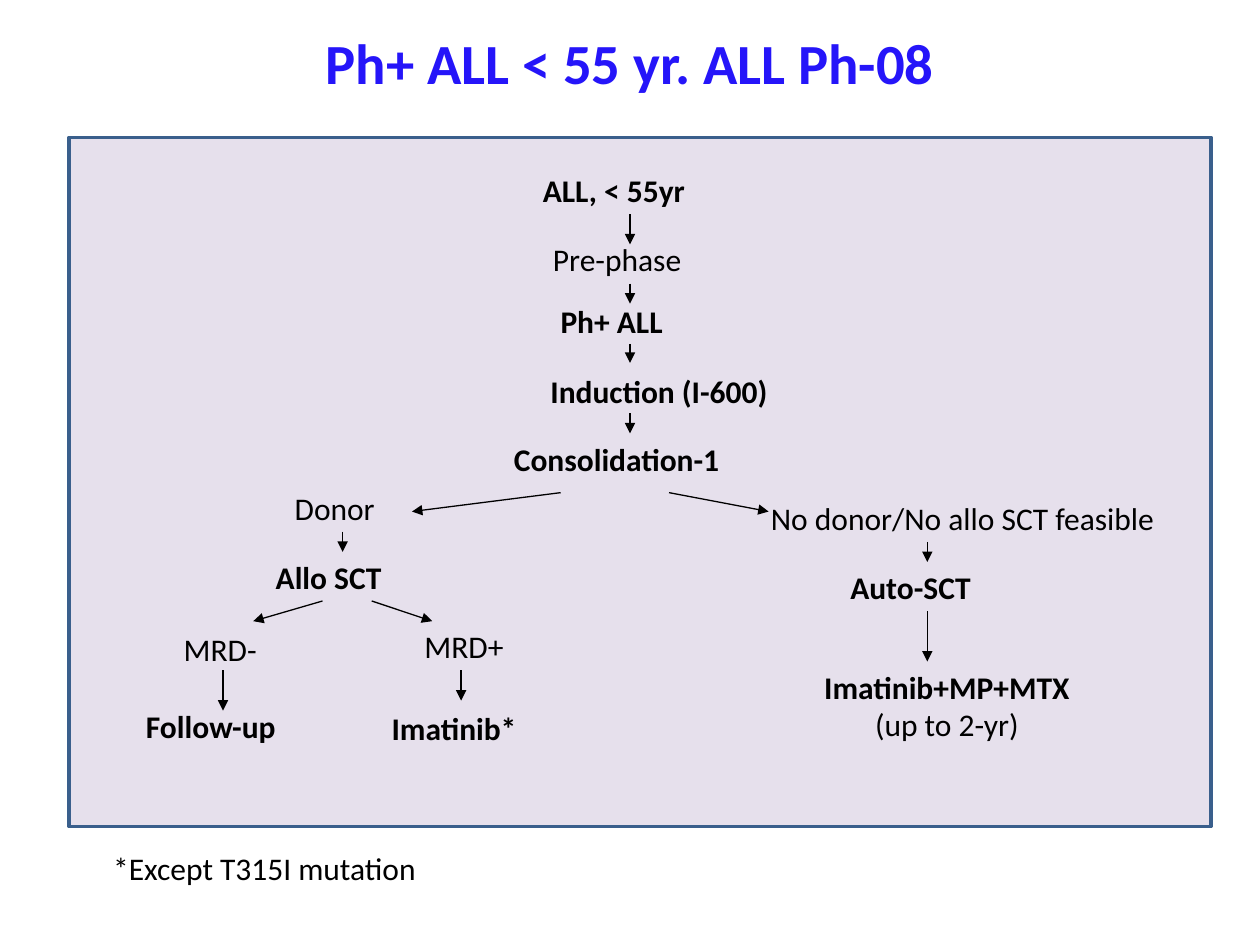
from pptx import Presentation, util as u
from pptx.dml.color import RGBColor
from pptx.enum import shapes, text
from pptx.oxml import parse_xml
from pptx.oxml.ns import nsdecls, qn
from lxml import etree

THEME = {
    "font": "Calibri", "title_size": 32.4, "body_size": 18,
    "title": "2515F9", "ink": "000000", "panel": "E6E0EC", "edge": "3A5F8C",
    "edge_width": 2, "arrow_width": 0.75,
}
TITLE = "Ph+ ALL < 55 yr. ALL Ph-08"
LINE_HEIGHT = 0.4
PANEL = (0.55, 1.09, 9.06, 5.47)

# Steps: left, top, width, lines as (wording, bold)
STEPS = [
    (4.21, 1.31, 1.56, [("ALL, < 55yr", True)]),
    (4.29, 1.86, 1.35, [("Pre-phase", False)]),
    (4.35, 2.35, 1.22, [("Ph+ ALL", True)]),
    (4.27, 2.90, 2.15, [("Induction (I-600)", True)]),
    (3.98, 3.44, 2.09, [("Consolidation-1", True)]),
    (2.24, 3.83, 0.88, [("Donor", False)]),
    (2.09, 4.38, 1.24, [("Allo SCT", True)]),
    (1.36, 4.95, 0.85, [("MRD-", False)]),
    (3.27, 4.93, 0.92, [("MRD+", False)]),
    (3.01, 5.58, 1.26, [("Imatinib*", True)]),
    (1.06, 5.56, 1.38, [("Follow-up", True)]),
    (6.02, 3.91, 3.61, [("No donor/No allo SCT feasible", False)]),
    (6.65, 4.46, 1.35, [("Auto-SCT", True)]),
    (6.34, 5.25, 2.35, [("Imatinib+MP+MTX", True), ("(up to 2-yr)", False)]),
    (0.80, 6.69, 2.80, [("*Except T315I mutation", False)]),
]

# Vertical arrows: x position, then (start, end) heights
DOWN_ARROWS = {
    5.00: [(1.70, 1.94), (2.25, 2.41), (2.73, 2.88), (3.28, 3.44)],
    2.72: [(4.22, 4.38)],
    1.77: [(5.32, 5.64)],
    3.66: [(5.32, 5.56)],
    7.36: [(4.30, 4.46), (4.85, 5.25)],
}
# Branches: start height, end height, (start x, end x) of each arm
BRANCHES = [
    (3.91, 4.06, [(4.45, 3.27), (5.31, 6.10)]),
    (4.77, 4.93, [(2.56, 2.01), (2.95, 3.43)]),
]


def color(name):
    return RGBColor.from_string(THEME[name])


def add_span(para, wording, size, ink, bold):
    span = para.add_run()
    span.text = wording
    span.font.name = THEME["font"]
    span.font.size = u.Pt(THEME[size])
    span.font.bold = bold
    span.font.color.rgb = color(ink)


def add_title(page):
    box = page.shapes.add_textbox(*map(u.Inches, (0.5, 0.3, 9, 0.77)))
    frame = box.text_frame
    frame.word_wrap = True
    frame.vertical_anchor = text.MSO_ANCHOR.TOP
    frame.margin_top = 0
    para = frame.paragraphs[0]
    para.alignment = text.PP_ALIGN.CENTER
    para.line_spacing = 0.85
    add_span(para, TITLE, "title_size", "title", True)


def add_panel(page):
    panel = page.shapes.add_shape(shapes.MSO_SHAPE.RECTANGLE, *map(u.Inches, PANEL))
    panel.shadow.inherit = False
    panel.fill.solid()
    panel.fill.fore_color.rgb = color("panel")
    panel.line.color.rgb = color("edge")
    panel.line.width = u.Pt(THEME["edge_width"])


def add_step(page, left, top, width, lines):
    height = LINE_HEIGHT + 0.3 * (len(lines) - 1)
    box = page.shapes.add_textbox(*map(u.Inches, (left, top, width, height)))
    frame = box.text_frame
    frame.word_wrap = False
    frame.auto_size = text.MSO_AUTO_SIZE.SHAPE_TO_FIT_TEXT
    for index, (wording, bold) in enumerate(lines):
        para = frame.add_paragraph() if index else frame.paragraphs[0]
        if len(lines) > 1:
            para.alignment = text.PP_ALIGN.CENTER
        add_span(para, wording, "body_size", "ink", bold)


def add_arrow(page, x1, y1, x2, y2):
    arrow = page.shapes.add_connector(
        shapes.MSO_CONNECTOR.STRAIGHT, *map(u.Inches, (x1, y1, x2, y2)))
    arrow.line.color.rgb = color("ink")
    arrow.line.width = u.Pt(THEME["arrow_width"])
    properties = arrow.element.spPr
    outline = properties.find(qn("a:ln"))
    etree.SubElement(outline, qn("a:tailEnd"), type="triangle")
    properties.append(parse_xml(f"<a:effectLst {nsdecls('a')}/>"))


def main():
    deck = Presentation()
    deck.slide_width, deck.slide_height = u.Inches(10), u.Inches(7.5)
    page = deck.slides.add_slide(deck.slide_layouts[6])

    # Panel, title and wording
    add_panel(page)
    add_title(page)
    for step in STEPS:
        add_step(page, *step)

    # Flow arrows
    for x, spans in DOWN_ARROWS.items():
        for start, end in spans:
            add_arrow(page, x, start, x, end)
    for top, bottom, arms in BRANCHES:
        for start, end in arms:
            add_arrow(page, start, top, end, bottom)

    deck.save("out.pptx")


if __name__ == "__main__":
    main()
